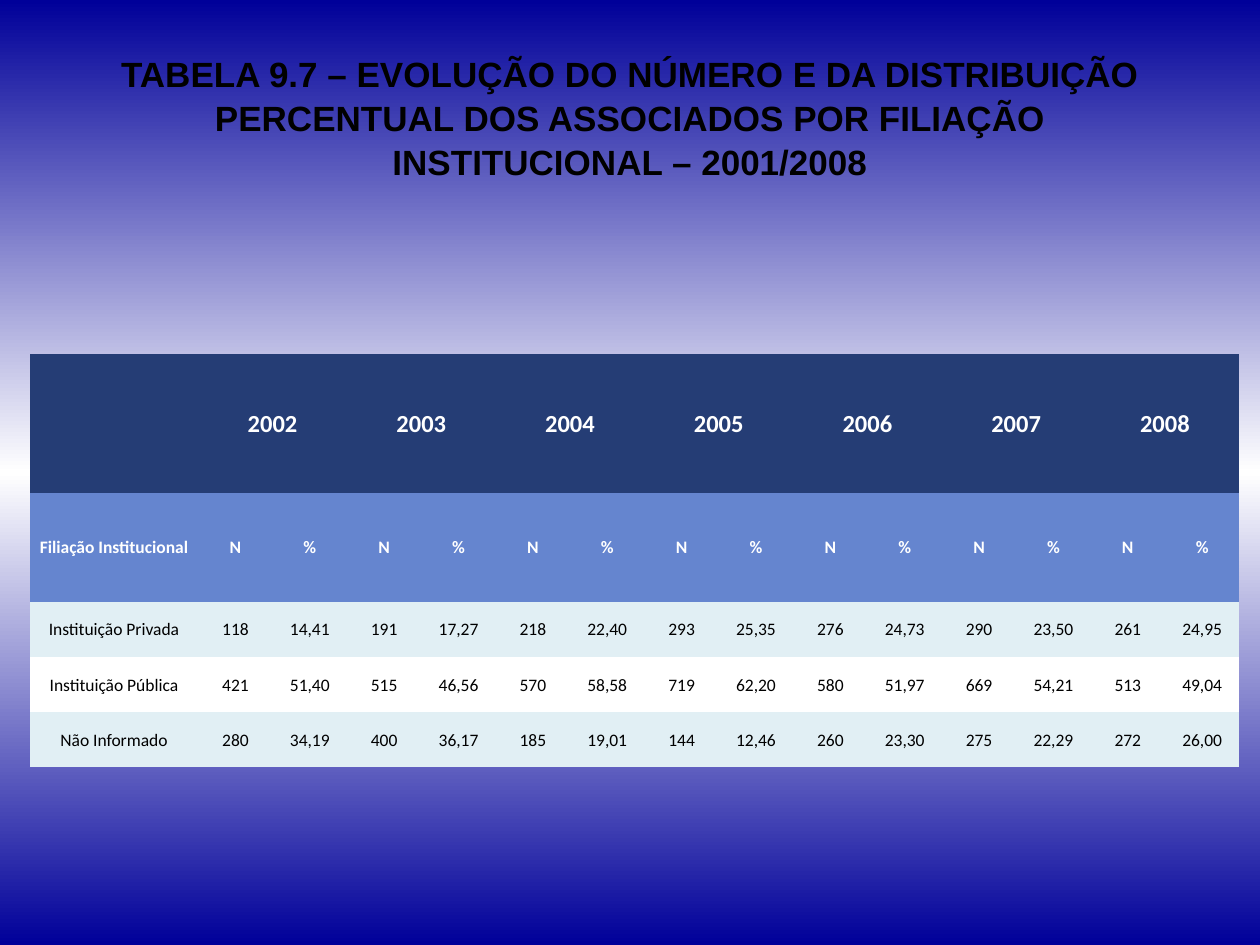
from copy import deepcopy

from pptx import Presentation
from pptx import util as u
from pptx.dml.color import RGBColor
from pptx.enum import text
from pptx.oxml.ns import qn

BLUE = RGBColor(0x00, 0x00, 0x99)
NAVY = RGBColor(0x25, 0x3D, 0x75)
SKY = RGBColor(0x65, 0x85, 0xCF)
PALE = RGBColor(0xE1, 0xEF, 0xF4)
WHITE = RGBColor(0xFF, 0xFF, 0xFF)
BLACK = RGBColor(0x00, 0x00, 0x00)

NO_STYLE_NO_GRID = "{2D5ABB26-0587-4C30-8999-92F81FD0307C}"
TITLE = ("TABELA 9.7 – EVOLUÇÃO DO NÚMERO E DA DISTRIBUIÇÃO PERCENTUAL "
         "DOS ASSOCIADOS POR FILIAÇÃO INSTITUCIONAL – 2001/2008")
YEARS = range(2002, 2009)
MEMBERS = [
    ["Instituição Privada", "118", "14,41", "191", "17,27", "218", "22,40", "293", "25,35",
     "276", "24,73", "290", "23,50", "261", "24,95"],
    ["Instituição Pública", "421", "51,40", "515", "46,56", "570", "58,58", "719", "62,20",
     "580", "51,97", "669", "54,21", "513", "49,04"],
    ["Não Informado", "280", "34,19", "400", "36,17", "185", "19,01", "144", "12,46",
     "260", "23,30", "275", "22,29", "272", "26,00"],
]


def write(frame, words, font, size, color, bold):
    frame.text = words
    para = frame.paragraphs[0]
    para.alignment = text.PP_ALIGN.CENTER
    para.font.name = font
    for span in para.runs:
        span.font.name = font
        span.font.size = u.Pt(size)
        span.font.color.rgb = color
        span.font.bold = bold


deck = Presentation()
deck.slide_width, deck.slide_height = u.Pt(720), u.Pt(540)
page = deck.slides.add_slide(deck.slide_layouts[6])

# Background: blue at both ends, white in the middle
fill = page.background.fill
fill.gradient()
fill.gradient_angle = 270
stop_list = page.background._cSld.find(".//" + qn("a:gsLst"))
stop_list.insert(1, deepcopy(stop_list[0]))
for stop, position, color in zip(fill.gradient_stops, (0, 0.5, 1), (BLUE, WHITE, BLUE)):
    stop.position = position
    stop.color.rgb = color

# Title
box = page.shapes.add_textbox(u.Pt(36), u.Pt(21.6), u.Pt(648), u.Pt(90))
frame = box.text_frame
frame.word_wrap = True
frame.vertical_anchor = text.MSO_ANCHOR.MIDDLE
write(frame, TITLE, "Arial", 20, BLACK, True)
frame.paragraphs[0].line_spacing = 1.05

# Table: one label column, then a pair of columns (N, %) for each year
year_cells = [""]
for year in YEARS:
    year_cells += [str(year), ""]
heading_cells = ["Filiação Institucional"] + ["N", "%"] * len(YEARS)
rows = [year_cells, heading_cells] + MEMBERS
row_heights = [79.3, 62.2] + [31.6] * len(MEMBERS)
column_widths = [96.4] + [42.5] * (2 * len(YEARS))
row_styles = [(NAVY, 14, WHITE, True), (SKY, 10, WHITE, True)]
row_styles += [(band, 10, BLACK, False) for band in (PALE, WHITE, PALE)]

table_shape = page.shapes.add_table(len(rows), len(column_widths), u.Pt(16.9), u.Pt(202.3),
                                    u.Pt(sum(column_widths)), u.Pt(sum(row_heights)))
table = table_shape.table
table._tbl.tblPr.find(qn("a:tableStyleId")).text = NO_STYLE_NO_GRID
table.horz_banding = False
for column, width in zip(table.columns, column_widths):
    column.width = u.Pt(width)

for row, height, words, style in zip(table.rows, row_heights, rows, row_styles):
    row.height = u.Pt(height)
    background, size, color, bold = style
    for cell, word in zip(row.cells, words):
        cell.fill.solid()
        cell.fill.fore_color.rgb = background
        cell.margin_left = cell.margin_right = cell.margin_top = u.Pt(0.7)
        cell.margin_bottom = u.Pt(0)
        cell.vertical_anchor = text.MSO_ANCHOR.MIDDLE
        write(cell.text_frame, word, "Calibri", size, color, bold)

for first in range(1, len(column_widths), 2):
    table.cell(0, first).merge(table.cell(0, first + 1))

deck.save("out.pptx")
